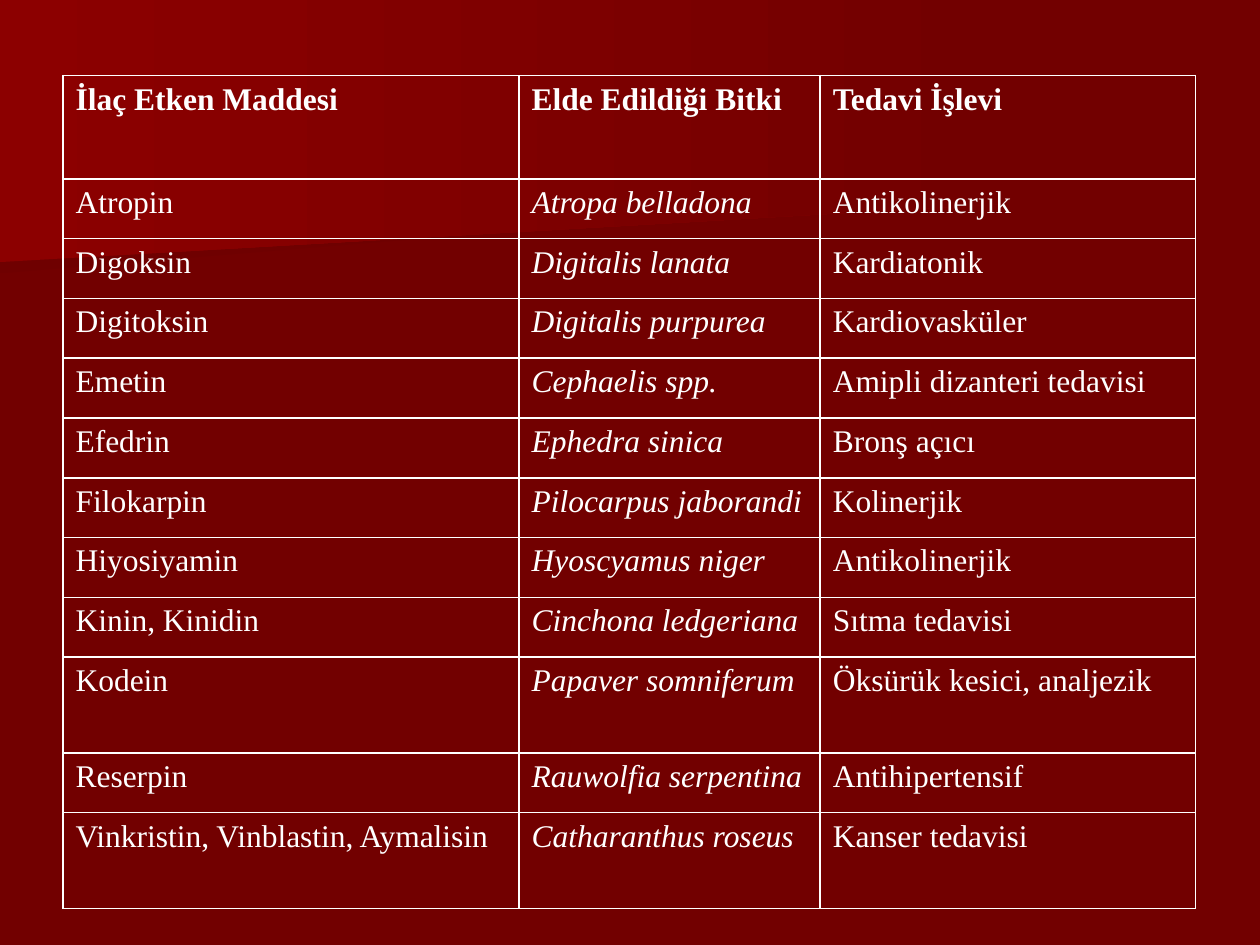
from lxml import etree
from pptx import Presentation, util as u
from pptx.dml.color import RGBColor
from pptx.enum import text
from pptx.oxml import ns

HEADINGS = ("İlaç Etken Maddesi", "Elde Edildiği Bitki", "Tedavi İşlevi")
DRUGS = [
    ("Atropin", "Atropa belladona", "Antikolinerjik"),
    ("Digoksin", "Digitalis lanata", "Kardiatonik"),
    ("Digitoksin", "Digitalis purpurea", "Kardiovasküler"),
    ("Emetin", "Cephaelis spp.", "Amipli dizanteri tedavisi"),
    ("Efedrin", "Ephedra sinica", "Bronş açıcı"),
    ("Filokarpin", "Pilocarpus jaborandi", "Kolinerjik"),
    ("Hiyosiyamin", "Hyoscyamus niger", "Antikolinerjik"),
    ("Kinin, Kinidin", "Cinchona ledgeriana", "Sıtma tedavisi"),
    ("Kodein", "Papaver somniferum", "Öksürük kesici, analjezik"),
    ("Reserpin", "Rauwolfia serpentina", "Antihipertensif"),
    ("Vinkristin, Vinblastin, Aymalisin", "Catharanthus roseus", "Kanser tedavisi"),
]
PLANT_COLUMN = 1
COLUMN_WIDTHS = (3.62, 2.39, 2.98)
HEADER_HEIGHT, TALL_HEIGHT, TABLE_HEIGHT = 0.82, 0.76, 6.61
TALL_ROWS = (9, 11)


def colour(value):
    return RGBColor.from_string(value)


class Slide:
    font, size = "Times New Roman", 18
    ink, ground = "FFFFFF", "720000"
    indent = u.Inches(0.38)

    def __init__(self, deck):
        self.page = deck.slides.add_slide(deck.slide_layouts[6])
        fill = self.page.background.fill
        fill.solid()
        fill.fore_color.rgb = colour(self.ground)

    def sheen(self, points, start):
        """Outline fading from left to right into the background."""
        corners = [(u.Inches(x), u.Inches(y)) for x, y in points]
        builder = self.page.shapes.build_freeform(*corners[0])
        builder.add_line_segments(corners[1:], close=True)
        shape = builder.convert_to_shape()
        shape.shadow.inherit = False
        shape.line.fill.background()
        shape.fill.gradient()
        shape.fill.gradient_angle = 0
        for stop, value in zip(shape.fill.gradient_stops, (start, self.ground)):
            stop.color.rgb = colour(value)

    def table(self, left, top, widths, heights, rows):
        frame = self.page.shapes.add_table(
            len(rows), len(widths), u.Inches(left), u.Inches(top),
            u.Inches(sum(widths)), u.Inches(sum(heights)))
        table = frame.table
        table.first_row = table.horz_banding = False
        for column, width in zip(table.columns, widths):
            column.width = u.Inches(width)
        for row, height in zip(table.rows, heights):
            row.height = u.Inches(height)
        for i, words in enumerate(rows):
            for j, word in enumerate(words):
                self.cell(table.cell(i, j), word, bold=i == 0,
                          italic=i > 0 and j == PLANT_COLUMN)

    def cell(self, cell, word, bold, italic):
        self.borders(cell)
        cell.fill.background()
        cell.vertical_anchor = text.MSO_ANCHOR.TOP
        para = cell.text_frame.paragraphs[0]
        properties = para._p.get_or_add_pPr()
        properties.set("marL", str(self.indent))
        properties.set("indent", str(-self.indent))
        span = para.add_run()
        span.text = word
        span.font.name, span.font.size = self.font, u.Pt(self.size)
        span.font.bold, span.font.italic = bold, italic
        span.font.color.rgb = colour(self.ink)

    def borders(self, cell):
        properties = cell._tc.get_or_add_tcPr()
        for side in ("lnL", "lnR", "lnT", "lnB"):
            line = etree.SubElement(properties, ns.qn(f"a:{side}"), w=str(u.Pt(1)))
            fill = etree.SubElement(line, ns.qn("a:solidFill"))
            etree.SubElement(fill, ns.qn("a:srgbClr"), val=self.ink)


def main():
    deck = Presentation()
    deck.slide_width, deck.slide_height = u.Inches(10), u.Inches(7.5)
    slide = Slide(deck)

    # Background sheen: shadow band, then the lighter band over it
    slide.sheen([(7.78, 1.53), (0, 2.17), (0, 1.01), (7.79, 1.01), (7.78, 1.28)], "6F0000")
    slide.sheen([(7.92, 1.62), (0, 2.08), (0, 0), (7.92, 0)], "8C0000")

    # Drug table: ordinary rows share the height left by the tall ones
    spare = TABLE_HEIGHT - HEADER_HEIGHT - TALL_HEIGHT * len(TALL_ROWS)
    normal = spare / (len(DRUGS) - len(TALL_ROWS))
    heights = [HEADER_HEIGHT] + [TALL_HEIGHT if i in TALL_ROWS else normal
                                 for i in range(1, len(DRUGS) + 1)]
    slide.table(0.5, 0.6, COLUMN_WIDTHS, heights, [HEADINGS] + DRUGS)

    deck.save("out.pptx")


if __name__ == "__main__":
    main()
